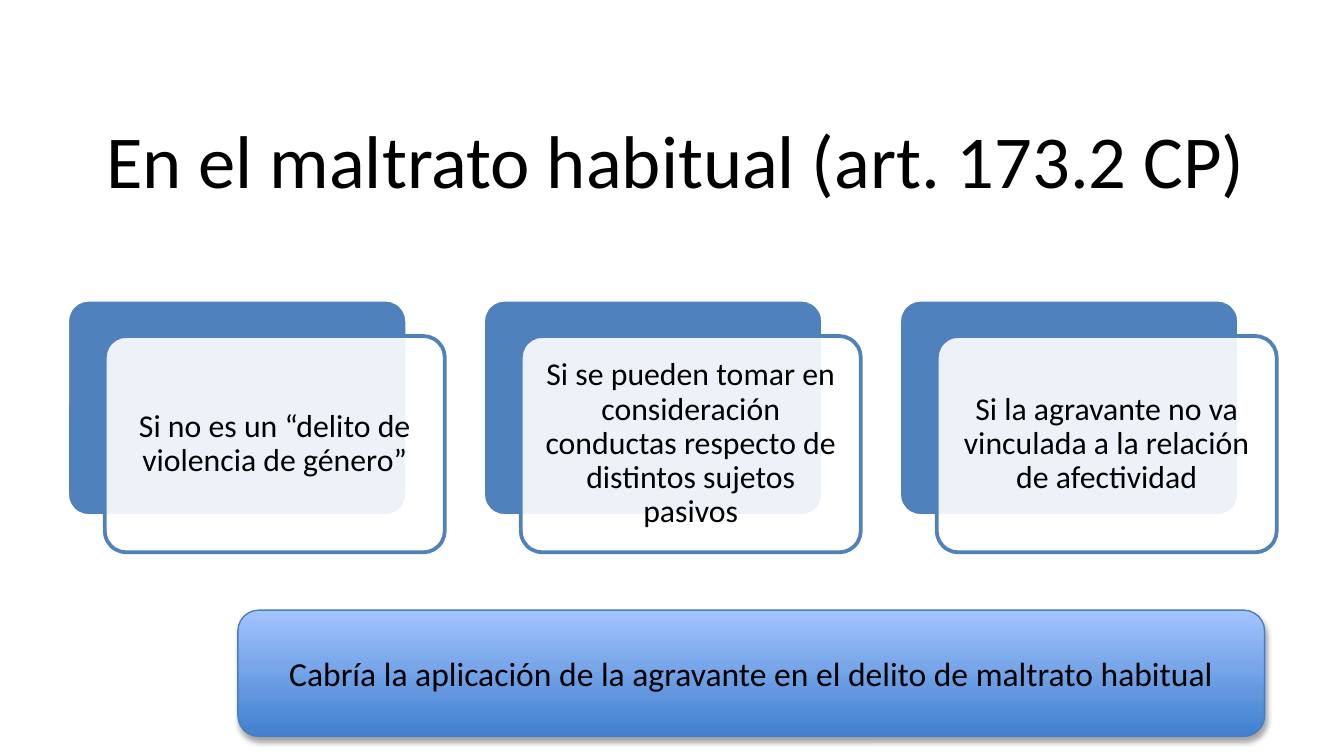
from dataclasses import dataclass

from lxml.etree import SubElement
from pptx import Presentation
from pptx.dml.color import RGBColor as Rgb
from pptx.enum.shapes import MSO_SHAPE as Preset
from pptx.enum.text import MSO_ANCHOR as Anchor, PP_ALIGN as Align
from pptx.oxml.ns import qn
from pptx.shapes.autoshape import Shape
from pptx.slide import Slide
from pptx.text.text import TextFrame
from pptx.util import Inches, Pt


@dataclass(frozen=True)
class Theme:
    font: str = "Calibri"
    text: Rgb = Rgb(0x00, 0x00, 0x00)
    paper: Rgb = Rgb(0xFF, 0xFF, 0xFF)
    accent: Rgb = Rgb(0x4F, 0x81, 0xBD)
    outline: Rgb = Rgb(0x4B, 0x7E, 0xBC)
    gradient: tuple[Rgb, Rgb] = (Rgb(0x3F, 0x80, 0xCE), Rgb(0xA4, 0xC4, 0xFF))
    title_size: float = 40
    condition_size: float = 17
    conclusion_size: float = 18


@dataclass(frozen=True)
class Box:
    left: float
    top: float
    width: float
    height: float

    def shifted(self, right: float, down: float) -> "Box":
        return Box(self.left + right, self.top + down, self.width, self.height)

    def lengths(self) -> tuple[Inches, ...]:
        return tuple(map(Inches, (self.left, self.top, self.width, self.height)))


THEME = Theme()
TITLE = "En el maltrato habitual (art. 173.2 CP) "
CONDITIONS = (
    "Si no es un “delito de violencia de género”",
    "Si se pueden tomar en consideración conductas respecto de distintos sujetos pasivos",
    "Si la agravante no va vinculada a la relación de afectividad",
)
CONCLUSION = "Cabría la aplicación de la agravante en el delito de maltrato habitual"
SLIDE_WIDTH = Inches(10)
SLIDE_HEIGHT = SLIDE_WIDTH * 9 // 16
TITLE_BOX = Box(0.59, 0.8, 9, 0.94)
FIRST_CARD = Box(0.5, 2.23, 2.53, 1.61)
LAST_CARD_LEFT = 6.69
CARD_PITCH = (LAST_CARD_LEFT - FIRST_CARD.left) / (len(CONDITIONS) - 1)
CARD_OFFSET = (0.28, 0.27)
CONCLUSION_BOX = Box(1.77, 4.54, 7.64, 0.94)


def write(frame: TextFrame, text: str, size: float, anchor: Anchor = Anchor.MIDDLE) -> None:
    frame.text = text
    frame.word_wrap = True
    frame.vertical_anchor = anchor
    paragraph = frame.paragraphs[0]
    paragraph.alignment = Align.CENTER
    for run in paragraph.runs:
        run.font.name = THEME.font
        run.font.size = Pt(size)
        run.font.color.rgb = THEME.text


def add_rounded(slide: Slide, box: Box, line: Rgb, weight: float) -> Shape:
    rounded = slide.shapes.add_shape(Preset.ROUNDED_RECTANGLE, *box.lengths())
    rounded.shadow.inherit = False
    rounded.line.color.rgb = line
    rounded.line.width = Pt(weight)
    return rounded


def add_card(slide: Slide, box: Box, fill: Rgb, line: Rgb) -> Shape:
    card = add_rounded(slide, box, line, 2)
    card.adjustments[0] = 0.1
    card.fill.solid()
    card.fill.fore_color.rgb = fill
    return card


def add_condition(slide: Slide, box: Box, text: str) -> None:
    add_card(slide, box, THEME.accent, THEME.paper)
    front = add_card(slide, box.shifted(*CARD_OFFSET), THEME.paper, THEME.accent)
    color = front._element.spPr.find(qn("a:solidFill"))[0]
    SubElement(color, qn("a:alpha"), val="90000")
    frame = front.text_frame
    frame.margin_left = frame.margin_right = Inches(0.07)
    frame.margin_top = frame.margin_bottom = Inches(0.07)
    write(frame, text, THEME.condition_size)
    frame.paragraphs[0].line_spacing = 0.9


def add_conclusion(slide: Slide, box: Box, text: str) -> None:
    conclusion = add_rounded(slide, box, THEME.outline, 0.75)
    conclusion.fill.gradient()
    conclusion.fill.gradient_angle = 90
    for stop, color in zip(conclusion.fill.gradient_stops, THEME.gradient):
        stop.color.rgb = color
    effects = conclusion._element.spPr.find(qn("a:effectLst"))
    shadow = SubElement(
        effects, qn("a:outerShdw"), blurRad=str(Pt(3.1)), dist=str(Pt(1.8)),
        dir="5400000", rotWithShape="0",
    )
    color = SubElement(shadow, qn("a:srgbClr"), val=str(THEME.text))
    SubElement(color, qn("a:alpha"), val="35000")
    write(conclusion.text_frame, text, THEME.conclusion_size)


def main() -> None:
    """Build the slide on aggravating circumstances in habitual abuse."""
    deck = Presentation()
    deck.slide_width, deck.slide_height = SLIDE_WIDTH, SLIDE_HEIGHT
    slide = deck.slides.add_slide(deck.slide_layouts[5])
    title = slide.shapes.title
    title.left, title.top, title.width, title.height = TITLE_BOX.lengths()
    write(title.text_frame, TITLE, THEME.title_size, Anchor.TOP)
    for column, text in enumerate(CONDITIONS):
        add_condition(slide, FIRST_CARD.shifted(column * CARD_PITCH, 0), text)
    add_conclusion(slide, CONCLUSION_BOX, CONCLUSION)
    deck.save("out.pptx")


if __name__ == "__main__":
    main()
